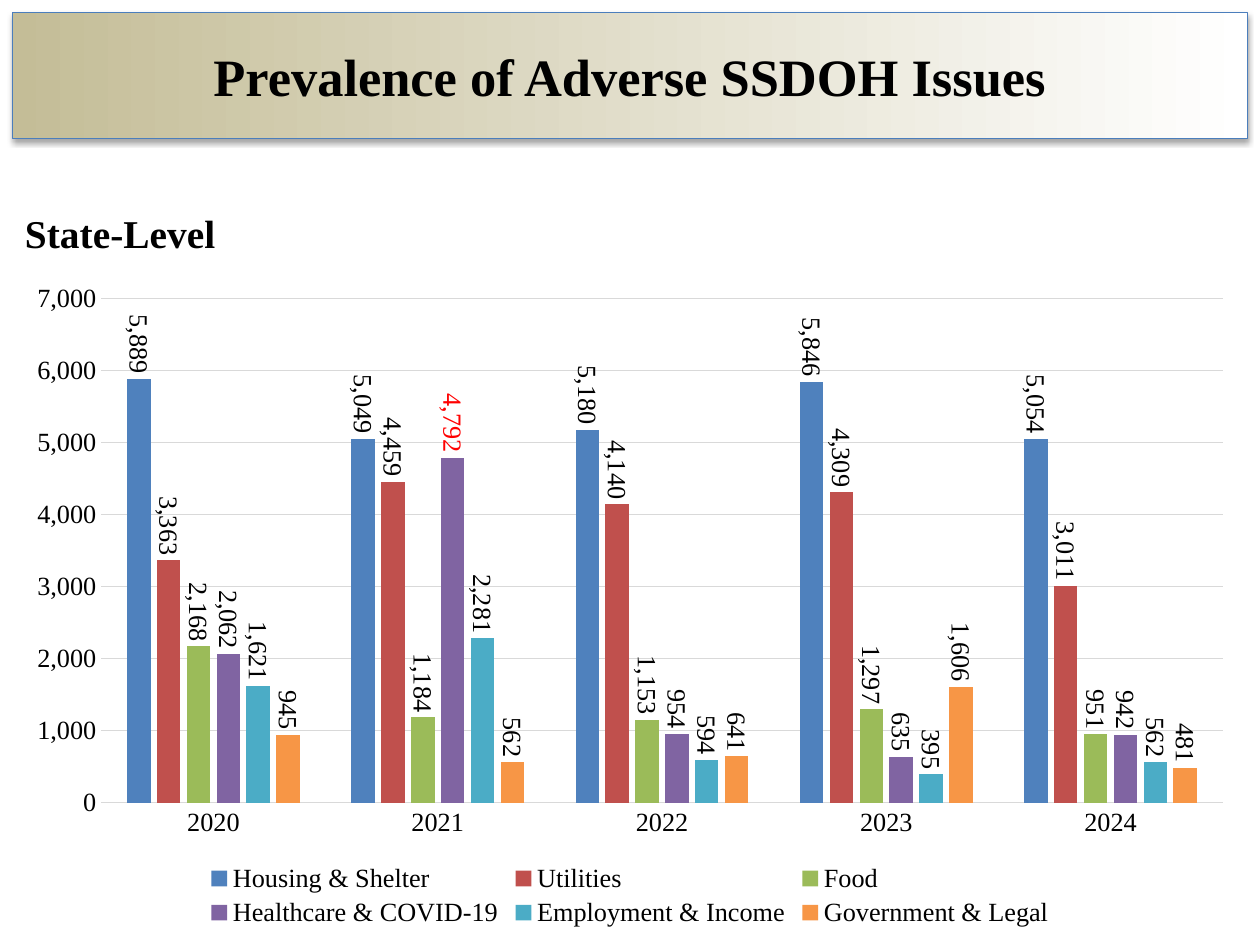
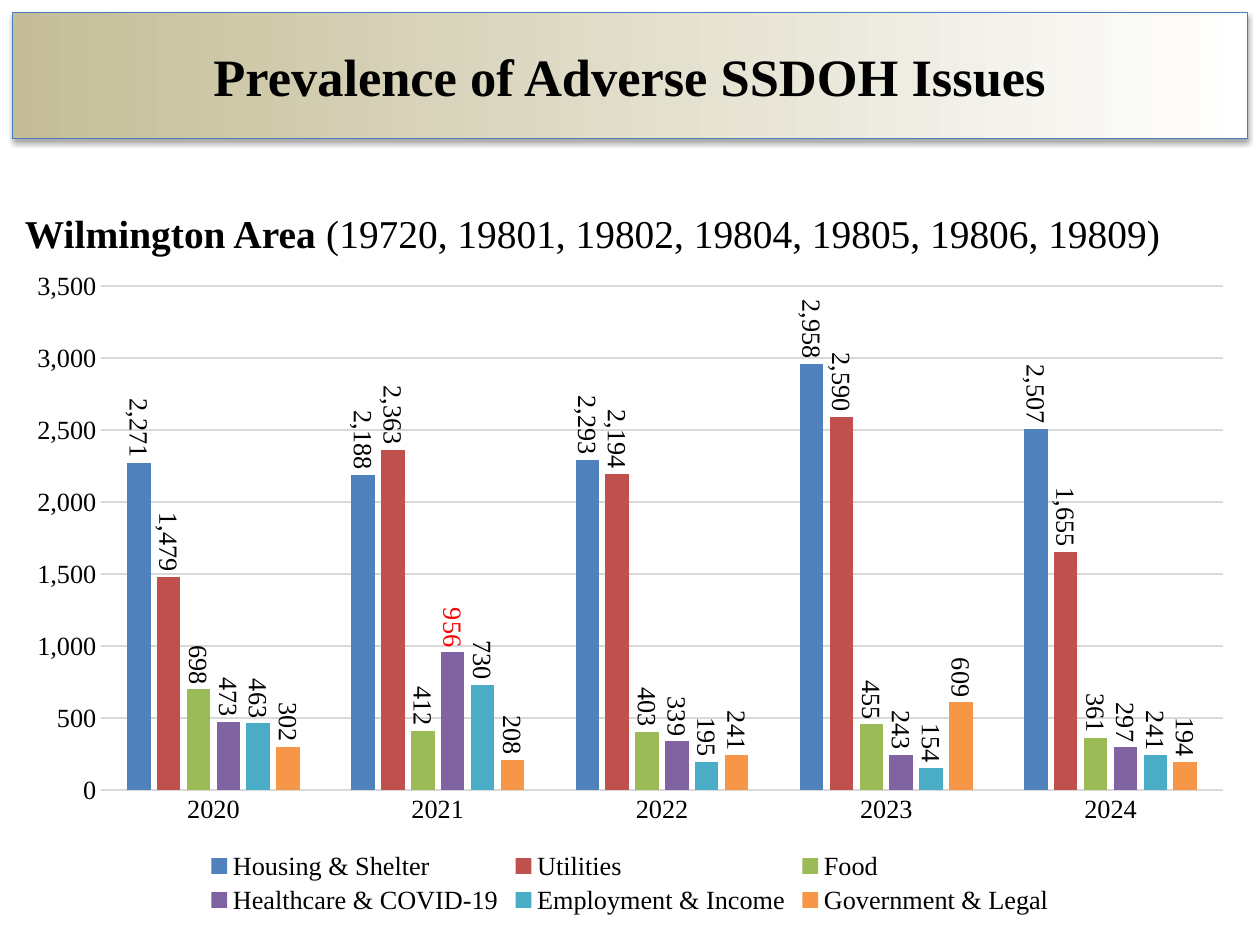
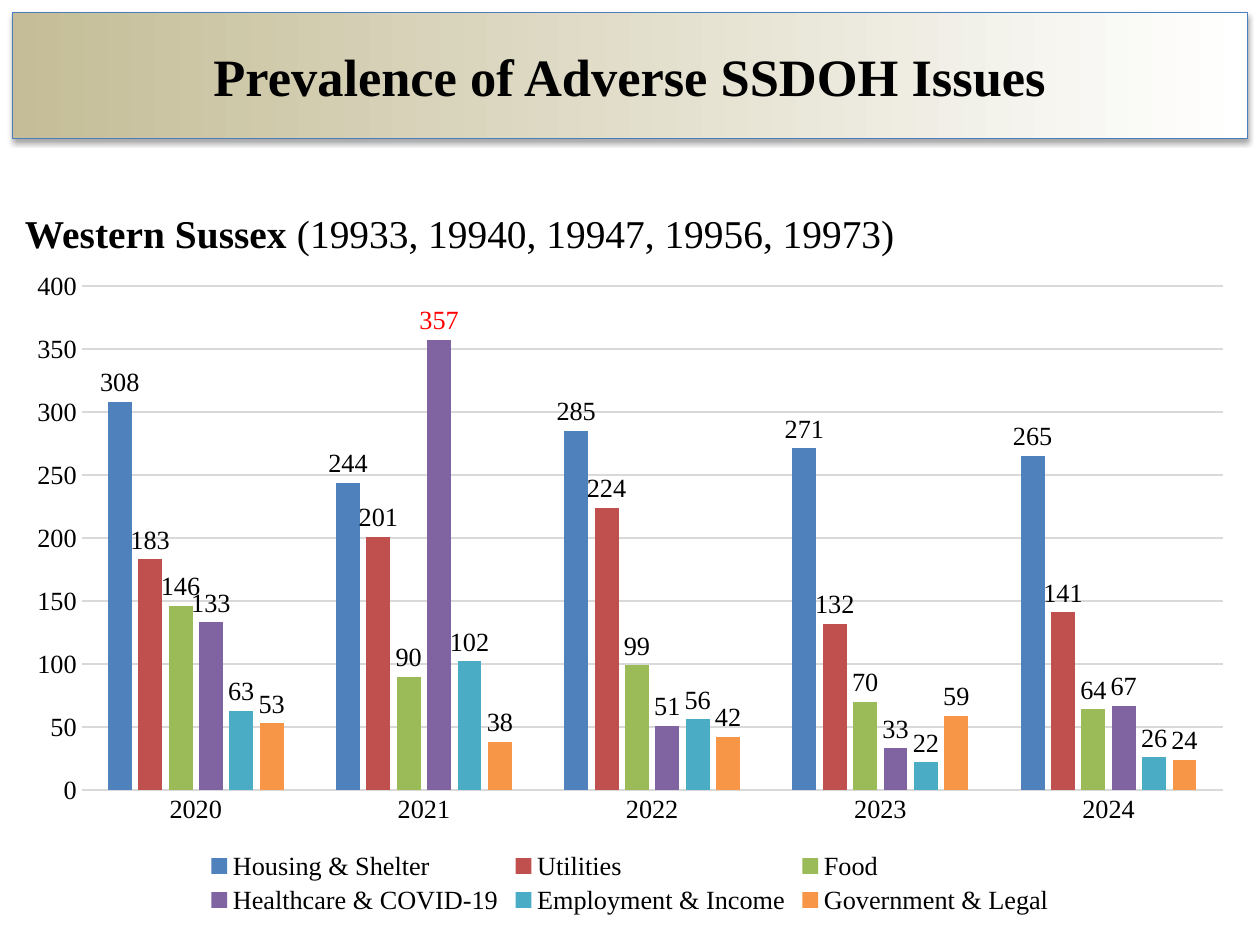
from dataclasses import dataclass

from lxml.etree import SubElement
from pptx import Presentation
from pptx.chart.data import CategoryChartData
from pptx.dml.color import RGBColor
from pptx.enum.chart import XL_CHART_TYPE, XL_LABEL_POSITION, XL_LEGEND_POSITION, XL_TICK_MARK
from pptx.enum.shapes import MSO_SHAPE
from pptx.enum.text import MSO_ANCHOR, PP_ALIGN
from pptx.oxml.ns import qn
from pptx.util import Inches, Pt


@dataclass(frozen=True)
class Theme:
    face: str = "Times New Roman"
    ink: str = "000000"
    alert: str = "FF0000"
    band_start: str = "C4BD97"
    band_end: str = "FFFFFF"
    band_edge: str = "4B7EBC"
    rule: str = "D9D9D9"
    hairline: float = 0.75
    title_size: float = 30
    area_size: float = 22.5
    chart_size: float = 15


THEME = Theme()

# Content: categories of need and yearly counts for each area
YEARS = ["2020", "2021", "2022", "2023", "2024"]
NEEDS = {
    "Housing & Shelter": "4F81BD",
    "Utilities": "C0504D",
    "Food": "9BBB59",
    "Healthcare & COVID-19": "8064A2",
    "Employment & Income": "4BACC6",
    "Government & Legal": "F79646",
}
PEAK_NEED, PEAK_YEAR = "Healthcare & COVID-19", YEARS.index("2021")
AREAS = [
    {
        "name": "State-Level", "zips": "", "chart_top": 2.15,
        "axis_max": 7000, "axis_step": 1000, "label_turn": 90,
        "counts": [
            [5889, 5049, 5180, 5846, 5054],
            [3363, 4459, 4140, 4309, 3011],
            [2168, 1184, 1153, 1297, 951],
            [2062, 4792, 954, 635, 942],
            [1621, 2281, 594, 395, 562],
            [945, 562, 641, 1606, 481],
        ],
    },
    {
        "name": "Wilmington Area ",
        "zips": "(19720, 19801, 19802, 19804, 19805, 19806, 19809)", "chart_top": 2.05,
        "axis_max": 3500, "axis_step": 500, "label_turn": 90,
        "counts": [
            [2271, 2188, 2293, 2958, 2507],
            [1479, 2363, 2194, 2590, 1655],
            [698, 412, 403, 455, 361],
            [473, 956, 339, 243, 297],
            [463, 730, 195, 154, 241],
            [302, 208, 241, 609, 194],
        ],
    },
    {
        "name": "Western Sussex ",
        "zips": "(19933, 19940, 19947, 19956, 19973)", "chart_top": 2.05,
        "axis_max": 400, "axis_step": 50, "label_turn": 0,
        "counts": [
            [308, 244, 285, 271, 265],
            [183, 201, 224, 132, 141],
            [146, 90, 99, 70, 64],
            [133, 357, 51, 33, 67],
            [63, 102, 56, 22, 26],
            [53, 38, 42, 59, 24],
        ],
    },
]


def style_font(font, size, color=THEME.ink, bold=False):
    for attribute, value in {"name": THEME.face, "size": Pt(size), "bold": bold}.items():
        setattr(font, attribute, value)
    font.color.rgb = RGBColor.from_string(color)


def style_line(line, color):
    line.color.rgb = RGBColor.from_string(color)
    line.width = Pt(THEME.hairline)


deck = Presentation()
deck.slide_width, deck.slide_height = Inches(10), Inches(7.5)
title_only = deck.slide_layouts[5]

# Shared frame: one margin on every side, a title band on top
margin = Inches(0.1)
content_width = deck.slide_width - 2 * margin
band_box = (margin, margin, content_width, Inches(1))

for area in AREAS:
    slide = deck.slides.add_slide(title_only)

    # Title band, behind the title
    band = slide.shapes.add_shape(MSO_SHAPE.RECTANGLE, *band_box)
    band.fill.gradient()
    band.fill.gradient_angle = 0
    for stop, position, color in zip(
        band.fill.gradient_stops, (0, 1), (THEME.band_start, THEME.band_end)
    ):
        stop.position = position
        stop.color.rgb = RGBColor.from_string(color)
    style_line(band.line, THEME.band_edge)
    band.shadow.inherit = False
    shadow = SubElement(
        band._element.spPr.find(qn("a:effectLst")), qn("a:outerShdw"),
        blurRad=str(Pt(3.1)), dist=str(Pt(1.8)), dir="5400000", rotWithShape="0",
    )
    shadow_color = SubElement(shadow, qn("a:srgbClr"), val=THEME.ink)
    SubElement(shadow_color, qn("a:alpha"), val="35000")
    slide.shapes._spTree.insert(2, band._element)

    # Title
    title = slide.shapes.title
    title.left, title.top, title.width, title.height = band_box
    title.text_frame.text = "Prevalence of Adverse SSDOH Issues"
    title.text_frame.vertical_anchor = MSO_ANCHOR.MIDDLE
    heading = title.text_frame.paragraphs[0]
    heading.alignment = PP_ALIGN.CENTER
    style_font(heading.runs[0].font, THEME.title_size, bold=True)

    # Area name and its zip codes
    area_frame = slide.shapes.add_textbox(
        margin, Inches(1.2), content_width, Inches(6)
    ).text_frame
    area_frame.word_wrap = True
    area_frame.margin_top = Inches(0.46)
    for text, bold in ((area["name"], True), (area["zips"], False)):
        if text:
            run = area_frame.paragraphs[0].add_run()
            run.text = text
            style_font(run.font, THEME.area_size, bold=bold)

    # Chart of counts by year
    counts = CategoryChartData(number_format="#,##0")
    counts.categories = YEARS
    for need, values in zip(NEEDS, area["counts"]):
        counts.add_series(need, values)
    chart = slide.shapes.add_chart(
        XL_CHART_TYPE.COLUMN_CLUSTERED, margin, Inches(area["chart_top"]),
        content_width, Inches(5.25), counts,
    ).chart
    style_font(chart.font, THEME.chart_size)
    chart.has_title = False
    chart.has_legend = True
    chart.legend.position = XL_LEGEND_POSITION.BOTTOM
    chart.legend.include_in_layout = False
    style_font(chart.legend.font, THEME.chart_size)

    # Axes
    years_axis, count_axis = chart.category_axis, chart.value_axis
    for axis in (years_axis, count_axis):
        axis.major_tick_mark = axis.minor_tick_mark = XL_TICK_MARK.NONE
        style_font(axis.tick_labels.font, THEME.chart_size)
    style_line(years_axis.format.line, THEME.rule)
    count_axis.format.line.fill.background()
    style_line(count_axis.major_gridlines.format.line, THEME.rule)
    count_scale = {
        "minimum_scale": 0,
        "maximum_scale": area["axis_max"],
        "major_unit": area["axis_step"],
    }
    for attribute, value in count_scale.items():
        setattr(count_axis, attribute, value)
    count_axis.tick_labels.number_format = "#,##0"
    count_axis.tick_labels.number_format_is_linked = False

    # Columns and their labels
    columns = chart.plots[0]
    columns.vary_by_categories = False
    columns.gap_width, columns.overlap = 219, -27
    for need in columns.series:
        need.format.fill.solid()
        need.format.fill.fore_color.rgb = RGBColor.from_string(NEEDS[need.name])
        labels = need.data_labels
        labels.show_value = True
        labels.number_format = "#,##0"
        labels.number_format_is_linked = False
        labels.position = XL_LABEL_POSITION.OUTSIDE_END
        style_font(labels.font, THEME.chart_size)
        if need.name == PEAK_NEED:
            peak_label = need.points[PEAK_YEAR].data_label
            style_font(peak_label.font, THEME.chart_size, THEME.alert)
            peak_label.position = XL_LABEL_POSITION.OUTSIDE_END
        for label_body in need._element.xpath("./c:dLbls//a:bodyPr"):
            label_body.set("rot", str(area["label_turn"] * 60000))
            label_body.set("vert", "horz")

deck.save("out.pptx")
